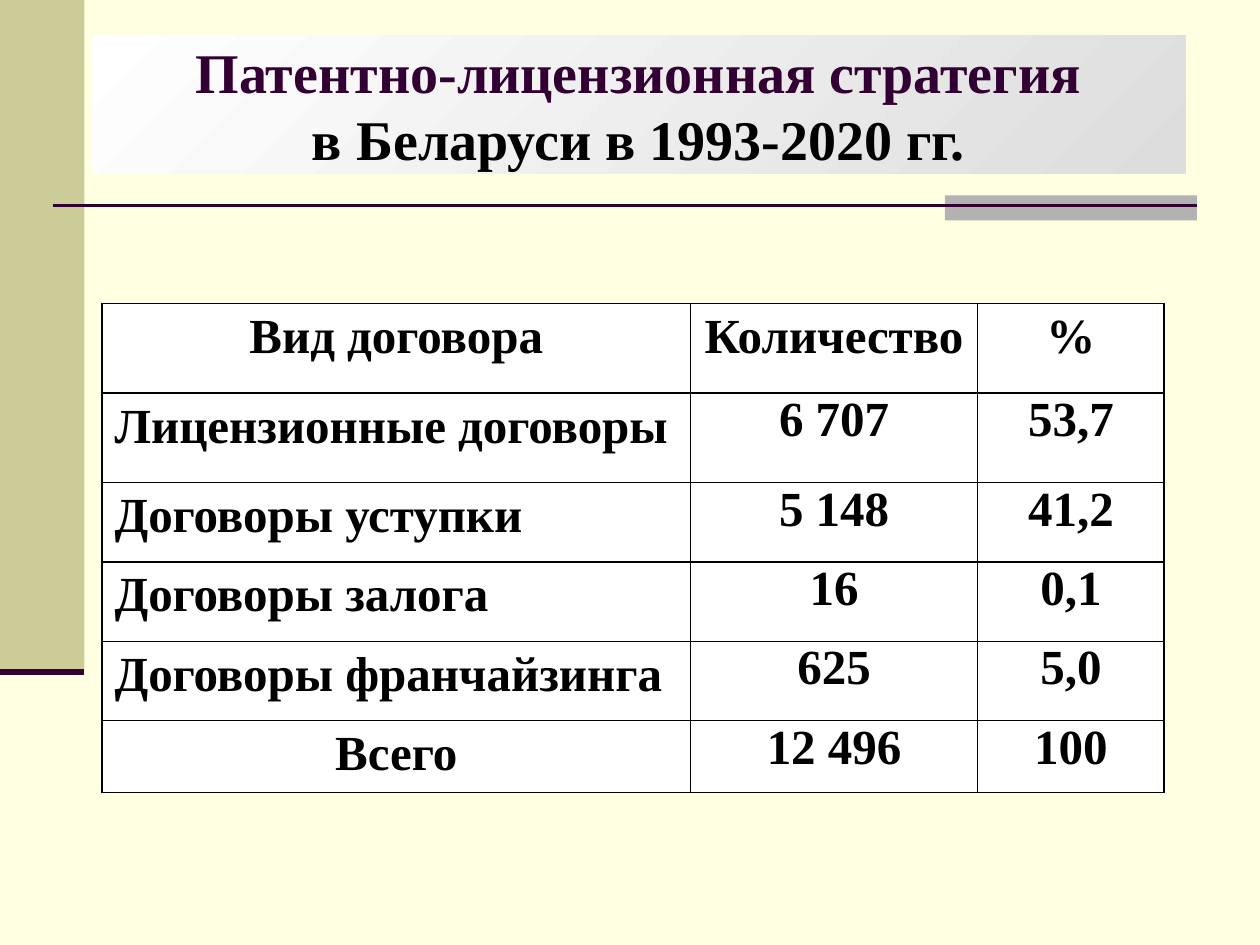
from dataclasses import dataclass

import pptx
import pptx.dml.color
import pptx.enum.shapes
import pptx.enum.text
import pptx.oxml.ns
import pptx.util
from lxml import etree
from pptx.util import Inches

COLORS = {
    "background": "FFFFE1",
    "sidebar": "CCCC99",
    "accent": "B2B2B2",
    "plum": "330033",
    "black": "000000",
    "white": "FFFFFF",
    "silver": "DDDDDD",
}
FONT = "Times New Roman"
CENTER = pptx.enum.text.PP_ALIGN.CENTER
LEFT = pptx.enum.text.PP_ALIGN.LEFT


@dataclass
class Block:
    left: float
    top: float
    width: float
    height: float
    color: str


@dataclass
class Rule:
    left: float
    right: float
    y: float
    weight: float


@dataclass
class ContractRow:
    cells: tuple[str, str, str]
    height: float
    name_align: pptx.enum.text.PP_ALIGN = LEFT
    before: float = 12
    after: float = 0
    is_header: bool = False


BLOCKS = [
    Block(0, 0, 0.67, 5.33, "sidebar"),
    Block(7.5, 1.55, 2, 0.2, "accent"),
]
RULES = [Rule(0.42, 9.5, 1.63, 1.5), Rule(0, 0.67, 5.33, 3.5)]
COLUMN_WIDTHS = [4.67, 2.28, 1.48]
CONTRACTS = [
    ContractRow(("Вид договора", "Количество", "%"), 0.71, CENTER, 0, is_header=True),
    ContractRow(("Лицензионные договоры", "6 707", "53,7"), 0.71),
    ContractRow(("Договоры уступки", "5 148", "41,2"), 0.63),
    ContractRow(("Договоры залога", "16", "0,1"), 0.63, before=6, after=6),
    ContractRow(("Договоры франчайзинга", "625", "5,0"), 0.63),
    ContractRow(("Всего", "12 496", "100"), 0.57, CENTER, 6),
]


def rgb(name: str) -> pptx.dml.color.RGBColor:
    return pptx.dml.color.RGBColor.from_string(COLORS[name])


def add_text(paragraph, text: str, size: float, color: str, align) -> None:
    paragraph.alignment = align
    run = paragraph.add_run()
    run.text = text
    run.font.name = FONT
    run.font.size = pptx.util.Pt(size)
    run.font.bold = True
    run.font.color.rgb = rgb(color)


def draw_block(slide, block: Block) -> None:
    rectangle = slide.shapes.add_shape(
        pptx.enum.shapes.MSO_SHAPE.RECTANGLE,
        Inches(block.left), Inches(block.top), Inches(block.width), Inches(block.height),
    )
    rectangle.shadow.inherit = False
    rectangle.fill.solid()
    rectangle.fill.fore_color.rgb = rgb(block.color)
    rectangle.line.fill.background()


def draw_rule(slide, rule: Rule) -> None:
    line = slide.shapes.add_connector(
        pptx.enum.shapes.MSO_CONNECTOR.STRAIGHT,
        Inches(rule.left), Inches(rule.y), Inches(rule.right), Inches(rule.y),
    )
    line.line.color.rgb = rgb("plum")
    line.line.width = pptx.util.Pt(rule.weight)
    etree.SubElement(line._element.spPr, pptx.oxml.ns.qn("a:effectLst"))


def draw_borders(cell) -> None:
    properties = cell._tc.get_or_add_tcPr()
    for side in ("a:lnL", "a:lnR", "a:lnT", "a:lnB"):
        border = etree.SubElement(properties, pptx.oxml.ns.qn(side), w=str(pptx.util.Pt(1)))
        fill = etree.SubElement(border, pptx.oxml.ns.qn("a:solidFill"))
        etree.SubElement(fill, pptx.oxml.ns.qn("a:srgbClr"), val=COLORS["black"])


def draw_contracts(slide, rows: list[ContractRow]) -> None:
    table = slide.shapes.add_table(
        len(rows), len(COLUMN_WIDTHS), Inches(0.81), Inches(2.41),
        Inches(sum(COLUMN_WIDTHS)), Inches(sum(row.height for row in rows)),
    ).table
    table.horz_banding = False
    for column, width in zip(table.columns, COLUMN_WIDTHS):
        column.width = Inches(width)
    for row_index, row in enumerate(rows):
        table.rows[row_index].height = Inches(row.height)
        for column_index, text in enumerate(row.cells):
            cell = table.cell(row_index, column_index)
            draw_borders(cell)
            cell.fill.solid()
            cell.fill.fore_color.rgb = rgb("white")
            paragraph = cell.text_frame.paragraphs[0]
            is_name = column_index == 0
            add_text(paragraph, text, 28, "black", row.name_align if is_name else CENTER)
            if not is_name and not row.is_header:
                cell.margin_left = cell.margin_right = Inches(0.07)
                cell.margin_top = cell.margin_bottom = 0
                paragraph.space_before = pptx.util.Pt(row.before)
                paragraph.space_after = pptx.util.Pt(row.after)


def draw_title(slide) -> None:
    title = slide.shapes.title
    title.left, title.top = Inches(0.73), Inches(0.28)
    title.width, title.height = Inches(8.68), Inches(1.1)
    title.fill.gradient()
    title.fill.gradient_angle = 315
    for stop, color in zip(title.fill.gradient_stops, ("white", "silver")):
        stop.color.rgb = rgb(color)
    frame = title.text_frame
    frame.auto_size = pptx.enum.text.MSO_AUTO_SIZE.NONE
    frame.vertical_anchor = pptx.enum.text.MSO_ANCHOR.MIDDLE
    add_text(frame.paragraphs[0], "Патентно-лицензионная стратегия", 32, "plum", CENTER)
    add_text(frame.add_paragraph(), "в Беларуси в 1993-2020 гг.", 32, "black", CENTER)


def main() -> None:
    presentation = pptx.Presentation()
    presentation.slide_width, presentation.slide_height = Inches(10), Inches(7.5)
    slide = presentation.slides.add_slide(presentation.slide_layouts[5])
    slide.background.fill.solid()
    slide.background.fill.fore_color.rgb = rgb("background")
    for block in BLOCKS:
        draw_block(slide, block)
    for rule in RULES:
        draw_rule(slide, rule)
    draw_contracts(slide, CONTRACTS)
    draw_title(slide)
    presentation.save("out.pptx")


if __name__ == "__main__":
    main()
